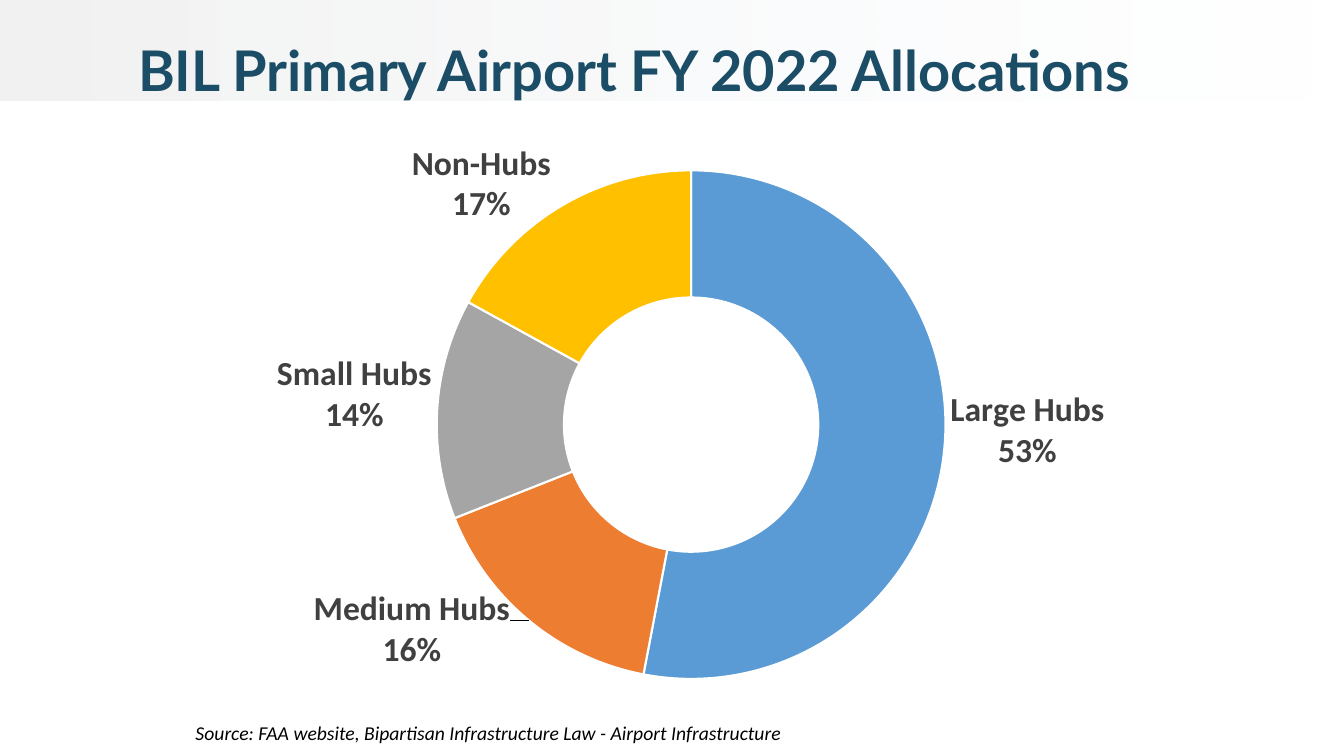
from lxml import etree
from pptx import Presentation
from pptx.chart.data import CategoryChartData
from pptx.dml.color import RGBColor
from pptx.enum import chart as ch, text
from pptx.oxml import parse_xml
from pptx.oxml.ns import nsdecls, qn
from pptx.util import Inches, Pt

NAVY = RGBColor(0x1C, 0x4D, 0x66)
BLACK = RGBColor(0, 0, 0)
WHITE = RGBColor(0xFF, 0xFF, 0xFF)
CHARCOAL = RGBColor(0x40, 0x40, 0x40)
BAND_GREY = RGBColor(0xF2, 0xF2, 0xF2)
BAND_PALE = RGBColor(0xF7, 0xFA, 0xFD)

# hub class, percent, colour, label shift as a share of the chart
HUBS = [
    ("Large Hubs", 53, RGBColor(0x5B, 0x9B, 0xD5), 0.13, -0.02),
    ("Medium Hubs", 16, RGBColor(0xED, 0x7D, 0x31), -0.14, 0.1),
    ("Small Hubs", 14, RGBColor(0xA5, 0xA5, 0xA5), -0.13, -0.03),
    ("Non-Hubs", 17, RGBColor(0xFF, 0xC0, 0x00), -0.1, -0.13),
]


def set_font(font, color, **values):
    for name, value in values.items():
        setattr(font, name, value)
    font.color.rgb = color


def manual_layout(**values):
    items = "".join(f'<c:{k} val="{v}"/>' for k, v in values.items())
    return parse_xml(f'<c:layout {nsdecls("c")}><c:manualLayout>{items}'
                     '</c:manualLayout></c:layout>')


prs = Presentation()
prs.slide_width, prs.slide_height = Inches(13.33), Inches(7.5)
s = prs.slides.add_slide(prs.slide_layouts[5])

# Header band, fading out to the right
fb = s.shapes.build_freeform(0, 0, scale=Inches(1))
fb.add_line_segments([(13.04, 0.02), (13.19, 1.19), (0, 1.32)])
band = fb.convert_to_shape()
band.shadow.inherit = False
band.line.fill.background()
band.fill.gradient()
band.fill.gradient_angle = 0
for stop, color in zip(band.fill.gradient_stops, (BAND_GREY, BAND_PALE)):
    stop.color.rgb = color
pale = band._element.spPr.findall(".//" + qn("a:srgbClr"))[-1]
etree.SubElement(pale, qn("a:alpha"), val="4000")
s.shapes._spTree.insert(2, band._element)

# Title
title = s.shapes.title
title.left, title.top, title.width, title.height = map(Inches, (1.27, 0.4, 11.17, 0.65))
tf = title.text_frame
tf.text = "BIL Primary Airport FY 2022 Allocations"
tf.vertical_anchor = text.MSO_ANCHOR.MIDDLE
tf.auto_size = text.MSO_AUTO_SIZE.NONE
p = tf.paragraphs[0]
p.alignment = text.PP_ALIGN.LEFT
p.line_spacing = 0.9
set_font(p.runs[0].font, NAVY, name="Lato", size=Pt(40), bold=True)

# Doughnut chart
data = CategoryChartData()
data.categories = [hub[0] for hub in HUBS]
data.add_series("Series 1", [hub[1] for hub in HUBS])
chart = s.shapes.add_chart(ch.XL_CHART_TYPE.DOUGHNUT, Inches(1.27), Inches(1.4),
                           Inches(11.17), Inches(5.8), data).chart
chart.has_legend = chart.has_title = False
set_font(chart.font, BLACK, name="Calibri", size=Pt(10))
plot = chart.plots[0]
plot.vary_by_categories = True
plot._element.find(qn("c:holeSize")).set("val", "50")

area = chart._chartSpace.chart.plotArea
for old in area.findall(qn("c:layout")):
    area.remove(old)
area.insert(0, manual_layout(layoutTarget="inner", xMode="edge", yMode="edge",
                             x=0.27, y=0.05, w=0.46, h=0.87))

series = plot.series[0]
labels = series.data_labels
labels.show_category_name = labels.show_percentage = True
labels.show_value = False
set_font(labels.font, CHARCOAL, name="Calibri", size=Pt(24), bold=True)
dLbls = labels._element
for i, (_, _, color, dx, dy) in enumerate(HUBS):
    fmt = series.points[i].format
    fmt.fill.solid()
    fmt.fill.fore_color.rgb = color
    fmt.line.color.rgb = WHITE
    fmt.line.width = Pt(1.5)
    flags = "".join(f'<c:show{k} val="{v}"/>' for k, v in (
        ("LegendKey", 0), ("Val", 0), ("CatName", 1), ("SerName", 0),
        ("Percent", 1), ("BubbleSize", 0)))
    dLbl = parse_xml(f'<c:dLbl {nsdecls("c")}><c:idx val="{i}"/>{flags}'
                     '<c:separator>\n</c:separator></c:dLbl>')
    dLbl.insert(1, manual_layout(x=dx, y=dy))
    dLbls.insert(i, dLbl)
separator = etree.Element(qn("c:separator"))
separator.text = "\n"
dLbls.find(qn("c:showBubbleSize")).addnext(separator) if dLbls.find(
    qn("c:showBubbleSize")) is not None else dLbls.find(qn("c:showPercent")).addnext(separator)

# Source note
note = s.shapes.add_textbox(Inches(1.84), Inches(7.1), Inches(6.12), Inches(0.34))
tf = note.text_frame
tf.word_wrap = False
tf.auto_size = text.MSO_AUTO_SIZE.SHAPE_TO_FIT_TEXT
r = tf.paragraphs[0].add_run()
r.text = "Source: FAA website, Bipartisan Infrastructure Law - Airport Infrastructure"
set_font(r.font, BLACK, name="Calibri", size=Pt(14), italic=True)

prs.save("out.pptx")
